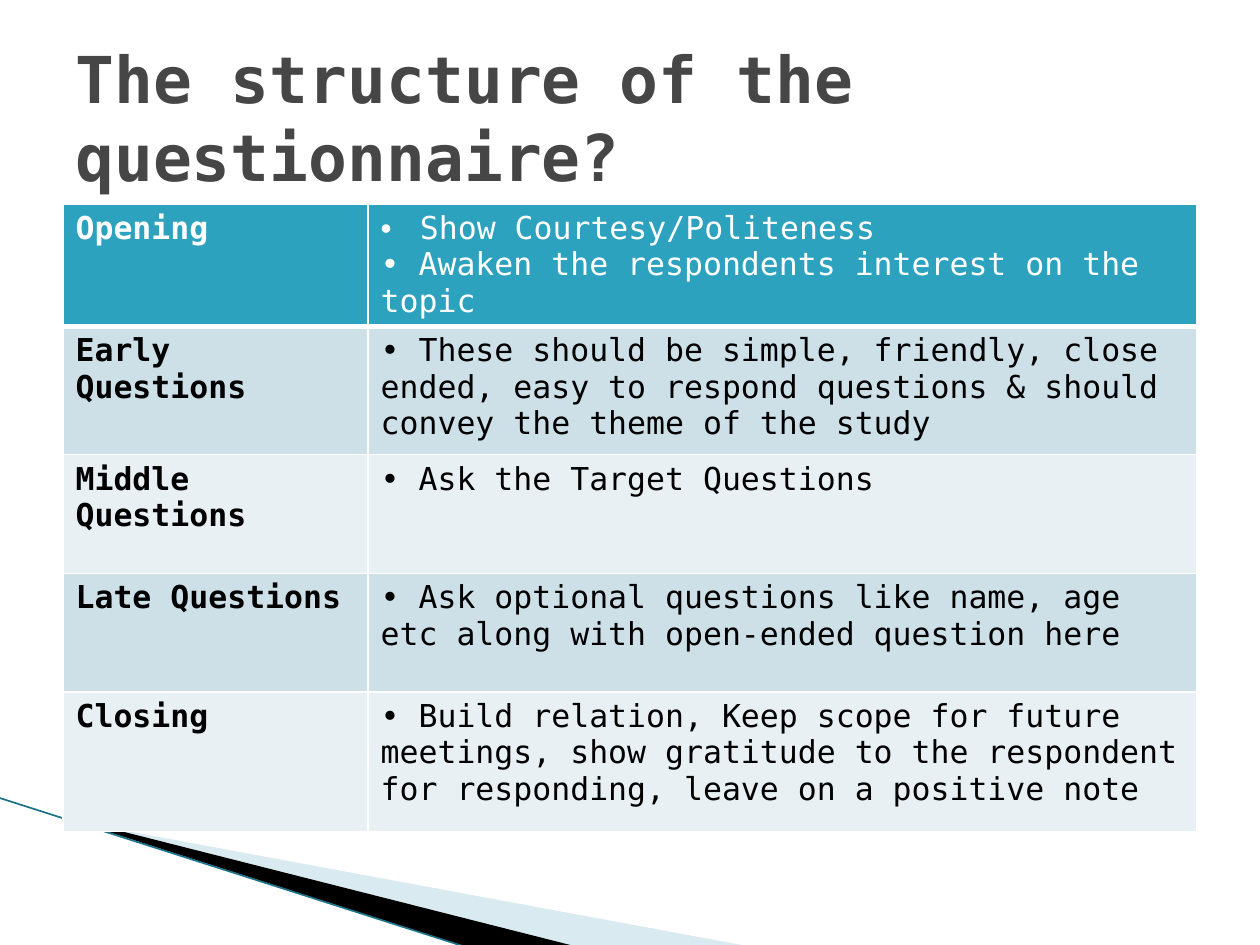
"""Build a slide that tabulates the structure of a questionnaire."""
from dataclasses import dataclass

from lxml.etree import SubElement
from pptx import Presentation
from pptx.dml.color import RGBColor
from pptx.enum.shapes import MSO_CONNECTOR as Connector
from pptx.enum.text import MSO_ANCHOR as Anchor
from pptx.oxml.ns import qn
from pptx.util import Cm, Pt


@dataclass(frozen=True)
class Theme:
    font: str = "DejaVu Sans Mono"
    title_size: float = 36.9
    body_size: float = 18
    title: str = "464646"
    text: str = "000000"
    header_text: str = "FFFFFF"
    header: str = "2DA2BF"
    bands: tuple = ("CDE0E8", "E8F0F4")
    border: str = "FFFFFF"
    light_wedge: str = "A0CBDC"
    dark_wedge: str = "000000"
    edge: str = "1B7288"


THEME = Theme()
COLUMN_WIDTHS = (6.15, 16.71)
ROW_HEIGHTS = (2.39, 2.59, 2.39, 2.39, 2.82)
STAGES = (
    ("Opening", ("Show Courtesy/Politeness",
                 "• Awaken the respondents interest on the topic")),
    ("Early Questions", ("• These should be simple, friendly, close ended, easy to "
                         "respond questions & should convey the theme of the study",)),
    ("Middle Questions", ("• Ask the Target Questions",)),
    ("Late Questions", ("• Ask optional questions like name, age etc along with "
                        "open-ended question here",)),
    ("Closing", ("• Build relation, Keep scope for future meetings, show gratitude to "
                 "the respondent for responding, leave on a positive note",)),
)


def add_run(paragraph, text, size, color, bold=False):
    run = paragraph.add_run()
    run.text = text
    run.font.name = THEME.font
    run.font.size = Pt(size)
    run.font.bold = bold
    run.font.color.rgb = RGBColor.from_string(color)


def add_bullet(paragraph):
    properties = paragraph._p.get_or_add_pPr()
    properties.set("marL", str(Cm(0.79)))
    properties.set("indent", str(Cm(-0.79)))
    SubElement(properties, qn("a:buFont"), typeface="Arial")
    SubElement(properties, qn("a:buChar"), char="•")


def add_wedge(slide, points, color, opacity=100):
    start, *others = [(Cm(x), Cm(y)) for x, y in points]
    builder = slide.shapes.build_freeform(*start)
    builder.add_line_segments(others, close=True)
    shape = builder.convert_to_shape()
    shape.shadow.inherit = False
    shape.line.fill.background()
    shape.fill.solid()
    shape.fill.fore_color.rgb = RGBColor.from_string(color)
    if opacity < 100:
        color_element = shape._element.spPr.find(qn("a:solidFill"))[0]
        SubElement(color_element, qn("a:alpha"), val=str(opacity * 1000))


def add_edge(slide, start, end):
    ends = [Cm(value) for value in (*start, *end)]
    connector = slide.shapes.add_connector(Connector.STRAIGHT, *ends)
    connector.line.color.rgb = RGBColor.from_string(THEME.edge)
    connector.line.width = Pt(0.95)
    SubElement(connector._element.spPr, qn("a:effectLst"))


def add_title(slide, text):
    shape = slide.shapes.add_textbox(Cm(1.27), Cm(0.76), Cm(22.86), Cm(3.18))
    shape.text_frame.word_wrap = True
    shape.text_frame.vertical_anchor = Anchor.MIDDLE
    add_run(shape.text_frame.paragraphs[0], text, THEME.title_size, THEME.title, True)


def style_cell(cell, fill, widths):
    properties = cell._tc.get_or_add_tcPr()
    for side, width in zip("LRTB", widths):
        line = SubElement(properties, qn(f"a:ln{side}"), w=str(Pt(width)))
        solid = SubElement(line, qn("a:solidFill"))
        SubElement(solid, qn("a:srgbClr"), val=THEME.border)
    cell.fill.solid()
    cell.fill.fore_color.rgb = RGBColor.from_string(fill)


def fill_cell(cell, texts, color, bold):
    frame = cell.text_frame
    for index, text in enumerate(texts):
        paragraph = frame.add_paragraph() if index else frame.paragraphs[0]
        add_run(paragraph, text, THEME.body_size, color, bold)


def add_stage_table(slide):
    table = slide.shapes.add_table(
        len(STAGES), len(COLUMN_WIDTHS), Cm(1.27), Cm(4.11),
        Cm(sum(COLUMN_WIDTHS)), Cm(sum(ROW_HEIGHTS))).table
    for column, width in zip(table.columns, COLUMN_WIDTHS):
        column.width = Cm(width)
    for index, (stage, advice) in enumerate(STAGES):
        table.rows[index].height = Cm(ROW_HEIGHTS[index])
        fill = THEME.bands[(index - 1) % 2] if index else THEME.header
        color = THEME.text if index else THEME.header_text
        top = 3 if index == 1 else 1
        bottom = 1 if index else 3
        for column, texts in enumerate(((stage,), advice)):
            cell = table.cell(index, column)
            style_cell(cell, fill, (1, 1, top, bottom))
            fill_cell(cell, texts, color, bold=column == 0)
    add_bullet(table.cell(0, 1).text_frame.paragraphs[0])


def main():
    presentation = Presentation()
    presentation.slide_width, presentation.slide_height = Cm(25.4), Cm(19.05)
    slide = presentation.slides.add_slide(presentation.slide_layouts[6])
    add_wedge(slide, ((1.4, 16.54), (15.11, 19.08), (11.58, 19.08), (1.4, 16.51)),
              THEME.light_wedge, opacity=40)
    add_wedge(slide, ((1.35, 16.48), (11.61, 19.08), (9.45, 19.1), (1.37, 16.51)),
              THEME.dark_wedge)
    add_edge(slide, (-0.03, 16.08), (9.42, 19.1))
    add_stage_table(slide)
    add_title(slide, "The structure of the questionnaire?")
    presentation.save("out.pptx")


if __name__ == "__main__":
    main()
